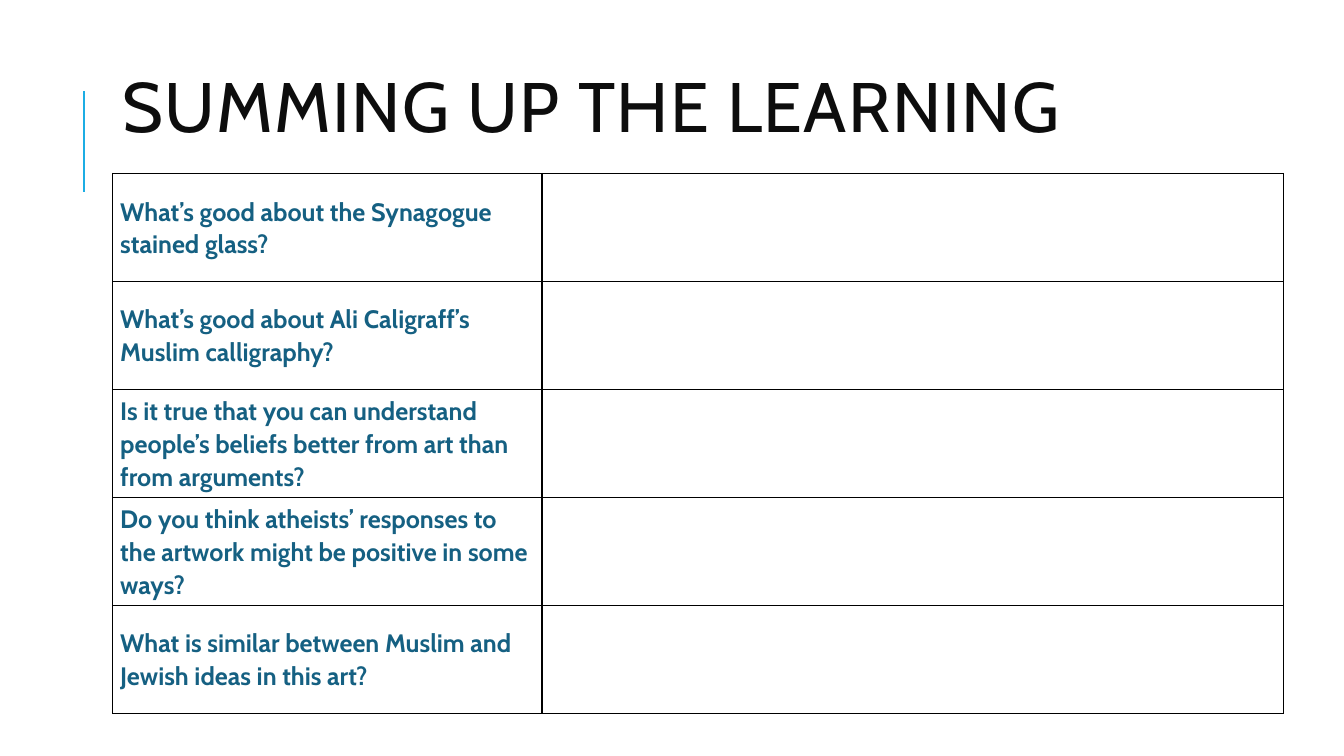
from lxml.etree import SubElement
from pptx import Presentation
from pptx.dml.color import RGBColor
from pptx.enum.shapes import MSO_CONNECTOR
from pptx.enum.text import MSO_ANCHOR
from pptx.oxml.ns import qn
from pptx.util import Cm, Pt

COLORS = {"accent": "1CADE4", "title": "0D0D0D", "question": "156082", "border": "000000"}
QUESTIONS = [
    "What’s good about the Synagogue stained glass?",
    "What’s good about Ali Caligraff’s Muslim calligraphy?",
    "Is it true that you can understand people’s beliefs better from art than from arguments?",
    "Do you think atheists’ responses to the artwork might be positive in some ways?",
    "What is similar between Muslim and Jewish ideas in this art?",
]


def write(tf, text, size, color, bold=False, line=1.0, after=0, spacing=0):
    tf.word_wrap = True
    p = tf.paragraphs[0]
    p.line_spacing = line
    p.space_after = Pt(after)
    r = p.add_run()
    r.text = text
    r.font.name = "Cabin"
    r.font.size = Pt(size)
    r.font.bold = bold
    r.font.color.rgb = RGBColor.from_string(COLORS[color])
    if spacing:
        r._r.get_or_add_rPr().set("spc", str(spacing * 100))


prs = Presentation()
prs.slide_width, prs.slide_height = Cm(33.87), Cm(19.05)
s = prs.slides.add_slide(prs.slide_layouts[6])

rule = s.shapes.add_connector(MSO_CONNECTOR.STRAIGHT, Cm(2.12), Cm(4.83), Cm(2.12), Cm(2.29))
rule.line.color.rgb = RGBColor.from_string(COLORS["accent"])
rule.line.width = Pt(1.5)
SubElement(rule._element.spPr, qn("a:effectLst"))

title = s.shapes.add_textbox(Cm(2.84), Cm(1.63), Cm(27), Cm(2.41))
title.text_frame.vertical_anchor = MSO_ANCHOR.MIDDLE
write(title.text_frame, "SUMMING UP THE LEARNING", 50, "title", line=0.8, spacing=1)

rows = len(QUESTIONS)
table = s.shapes.add_table(rows, 2, Cm(2.84), Cm(4.37), Cm(29.51), Cm(2.72 * rows)).table
table.first_row = table.horz_banding = False
table.columns[0].width, table.columns[1].width = Cm(10.82), Cm(18.69)
for row in table.rows:
    row.height = Cm(2.72)

for cell in table.iter_cells():
    tcPr = cell._tc.get_or_add_tcPr()
    for side in ("lnL", "lnR", "lnT", "lnB"):
        ln = SubElement(tcPr, qn(f"a:{side}"), w=str(Pt(1)))
        fill = SubElement(ln, qn("a:solidFill"))
        SubElement(fill, qn("a:srgbClr"), val=COLORS["border"])
    cell.fill.background()
    cell.vertical_anchor = MSO_ANCHOR.MIDDLE
    cell.margin_left = cell.margin_right = Cm(0.19)
    cell.margin_top = cell.margin_bottom = 0

for i, question in enumerate(QUESTIONS):
    write(table.cell(i, 0).text_frame, question, 18, "question", bold=True, line=1.07, after=8)

prs.save("out.pptx")
